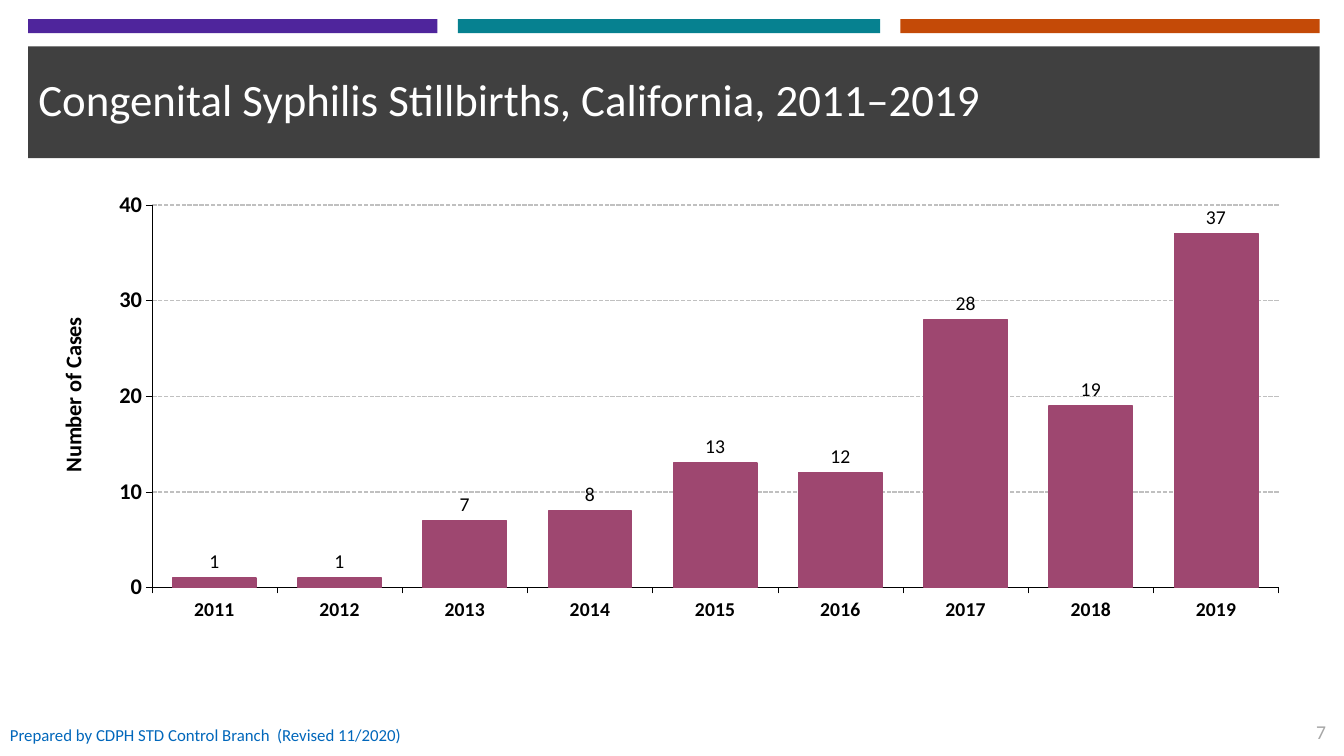
from lxml import etree
from pptx import Presentation
from pptx import util as u
from pptx.chart.data import CategoryChartData
from pptx.dml.color import RGBColor
from pptx.enum import chart as ch, dml, shapes, text
from pptx.oxml.ns import qn

# Content
TITLE = "Congenital Syphilis Stillbirths, California, 2011–2019"
AXIS_TITLE = "Number of Cases"
STILLBIRTHS = {2011: 1, 2012: 1, 2013: 7, 2014: 8, 2015: 13,
               2016: 12, 2017: 28, 2018: 19, 2019: 37}
FONT = "Calibri"
BLACK, BLUE, GRAY, PLUM = "000000", "0167BB", "A6A6A6", "9E4770"
TITLE_BOX = (0.28, 0.46, 12.81, 1.11)
CHART_BOX = (0.28, 1.69, 12.63, 5.06)
BANDS = [  # box, fill
    (TITLE_BOX, "404040"),
    ((0.28, 0.19, 4.06, 0.14), "4F259C"),
    ((4.54, 0.19, 4.19, 0.14), "068190"),
    ((8.93, 0.19, 4.16, 0.14), "C44A07"),
]
FOOTER = [  # text, box, size, colour, alignment
    ("7", (12.82, 7.09, 0.43, 0.34), 14, GRAY, text.PP_ALIGN.RIGHT),
    ("Prepared by CDPH STD Control Branch", (0, 7.09, 2.8, 0.4), 12, BLUE, text.PP_ALIGN.LEFT),
    ("(Revised 11/2020)", (2.65, 7.09, 1.5, 0.4), 12, BLUE, text.PP_ALIGN.LEFT),
]


def color(hex_code):
    return RGBColor.from_string(hex_code)


def inches(box):
    return [u.Inches(value) for value in box]


def style_font(font, size, hex_code=BLACK, bold=False):
    font.name, font.size, font.bold = FONT, u.Pt(size), bold
    font.color.rgb = color(hex_code)


def style_line(line, hex_code, width):
    line.color.rgb = color(hex_code)
    line.width = u.Pt(width)


def write(frame, words, size, hex_code=BLACK, bold=False, align=None, spacing=None):
    paragraph = frame.paragraphs[0]
    paragraph.alignment, paragraph.line_spacing = align, spacing
    run = paragraph.add_run()
    run.text = words
    style_font(run.font, size, hex_code, bold)


def place(parent, index, settings):
    """Set a manual layout on a chart part."""
    layout = parent.find(qn("c:layout"))
    if layout is None:
        layout = etree.Element(qn("c:layout"))
        parent.insert(index, layout)
    manual = etree.SubElement(layout, qn("c:manualLayout"))
    for name, value in settings.items():
        etree.SubElement(manual, qn("c:" + name)).set("val", str(value))


prs = Presentation()
prs.slide_width, prs.slide_height = u.Inches(13.33), u.Inches(7.5)
slide = prs.slides.add_slide(prs.slide_layouts[5])

# Colour bands and title bar
for box, fill in BANDS:
    band = slide.shapes.add_shape(shapes.MSO_SHAPE.RECTANGLE, *inches(box))
    band.shadow.inherit = False
    band.fill.solid()
    band.fill.fore_color.rgb = color(fill)
    band.line.fill.background()

# Title, brought in front of its bar
title = slide.shapes.title
title.left, title.top, title.width, title.height = inches(TITLE_BOX)
title.text_frame.vertical_anchor = text.MSO_ANCHOR.MIDDLE
write(title.text_frame, TITLE, 32, "FFFFFF", align=text.PP_ALIGN.LEFT, spacing=0.9)
slide.shapes._spTree.append(title._element)

# Footer
for words, box, size, hex_code, align in FOOTER:
    frame = slide.shapes.add_textbox(*inches(box)).text_frame
    frame.word_wrap = True
    frame.vertical_anchor = text.MSO_ANCHOR.MIDDLE
    write(frame, words, size, hex_code, align=align)

# Chart
data = CategoryChartData()
data.categories = [str(year) for year in STILLBIRTHS]
data.add_series(AXIS_TITLE, STILLBIRTHS.values())
chart = slide.shapes.add_chart(
    ch.XL_CHART_TYPE.COLUMN_CLUSTERED, *inches(CHART_BOX), data).chart
chart.has_title = chart.has_legend = False
style_font(chart.font, 14, bold=True)
place(chart._chartSpace.chart.plotArea, 0,
      {"layoutTarget": "inner", "xMode": "edge", "yMode": "edge",
       "x": 0.097, "y": 0.068, "w": 0.885, "h": 0.75})

# Columns and their labels
plot = chart.plots[0]
plot.gap_width = 50
plot.vary_by_categories = False
columns = plot.series[0].format
columns.fill.solid()
columns.fill.fore_color.rgb = color(PLUM)
style_line(columns.line, PLUM, 1.06)
plot.has_data_labels = True
labels = plot.data_labels
labels.show_value = True
labels.position = ch.XL_LABEL_POSITION.OUTSIDE_END
style_font(labels.font, 14)

# Axes
years, cases = chart.category_axis, chart.value_axis
for axis, size in ((years, 14), (cases, 16)):
    axis.major_tick_mark = ch.XL_TICK_MARK.OUTSIDE
    axis.minor_tick_mark = ch.XL_TICK_MARK.NONE
    style_font(axis.tick_labels.font, size, bold=True)
    style_line(axis.format.line, BLACK, 0.25)
cases.minimum_scale, cases.maximum_scale, cases.major_unit = 0, 40, 10
cases.tick_labels.number_format = "#,##0"
cases.tick_labels.number_format_is_linked = False
grid = cases.major_gridlines.format.line
style_line(grid, "C0C0C0", 1.06)
grid.dash_style = dml.MSO_LINE.SQUARE_DOT
write(cases.axis_title.text_frame, AXIS_TITLE, 16, bold=True)
place(cases.axis_title._element, 1,
      {"xMode": "edge", "yMode": "edge", "x": 0.02, "y": 0.28})

prs.save("out.pptx")
